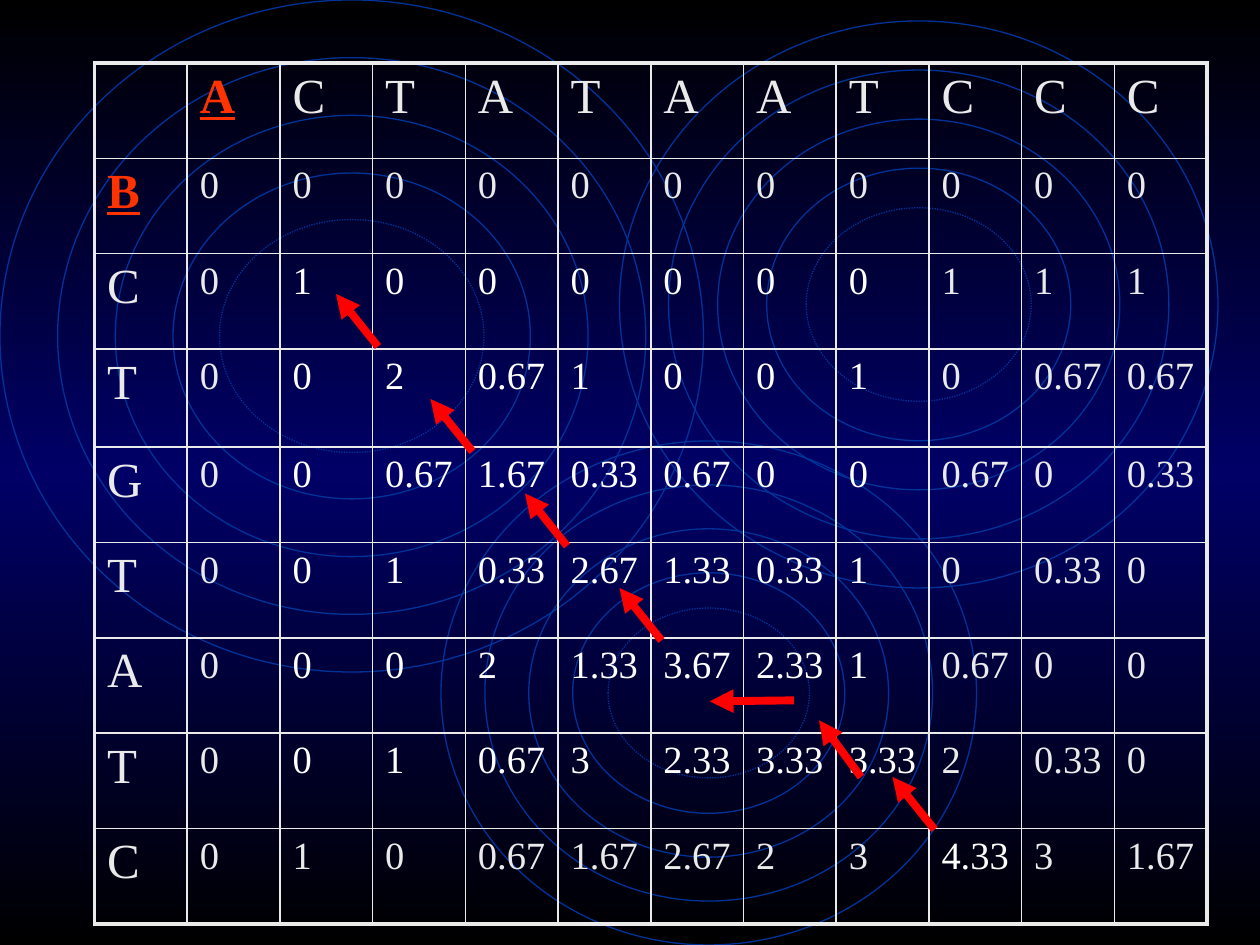
from copy import deepcopy

from lxml.etree import SubElement
from pptx import Presentation
from pptx.dml.color import RGBColor
from pptx.enum.dml import MSO_LINE
from pptx.enum.shapes import MSO_CONNECTOR, MSO_SHAPE
from pptx.oxml.ns import qn
from pptx.util import Inches, Pt

COLORS = {
    "black": "000000",
    "navy": "000066",
    "ring": "003399",
    "text": "EAEAEA",
    "window": "FFFFFF",
    "sequence": "FF3300",
    "arrow": "FF0000",
}
FONT = "Times New Roman"
GRID_COLUMNS, GRID_ROWS = 120, 90
SLIDE_WIDTH, SLIDE_HEIGHT = Inches(10), Inches(7.5)

RING_BOXES = [(0, 0, 67, 64), (42, 42, 51, 48), (59, 2, 57, 54)]
RING_INSETS = [0, 0.082, 0.164, 0.246, 0.312]

MATRIX_BOX = (9, 6, 106, 82)
MATRIX_ROWS = [
    ["", *"ACTATAATCCC"],
    "B 0 0 0 0 0 0 0 0 0 0 0".split(),
    "C 0 1 0 0 0 0 0 0 1 1 1".split(),
    "T 0 0 2 0.67 1 0 0 1 0 0.67 0.67".split(),
    "G 0 0 0.67 1.67 0.33 0.67 0 0 0.67 0 0.33".split(),
    "T 0 0 1 0.33 2.67 1.33 0.33 1 0 0.33 0".split(),
    "A 0 0 0 2 1.33 3.67 2.33 1 0.67 0 0".split(),
    "T 0 0 1 0.67 3 2.33 3.33 3.33 2 0.33 0".split(),
    "C 0 1 0 0.67 1.67 2.67 2 3 4.33 3 1.67".split(),
]
ROW_WEIGHTS = [1, 1, 1, 1.03, 1, 1, 1, 1, 1]
SEQUENCE_NAMES = {(0, 1), (1, 0)}
BEST_SCORE = (8, 9)

TRACEBACK = [
    (89, 79, 85, 74),
    (75.6, 66.7, 67.6, 66.8),
    (63, 61, 59, 56),
    (45, 43, 41, 38),
    (54, 52, 50, 47),
    (36, 33, 32, 28),
    (82, 74, 78, 68.6),
]


def color(name):
    """Return the palette colour of that name."""
    return RGBColor.from_string(COLORS[name])


def place(left, top, right, bottom):
    """Turn two pairs of grid positions into slide lengths."""
    across, down = SLIDE_WIDTH / GRID_COLUMNS, SLIDE_HEIGHT / GRID_ROWS
    return round(left * across), round(top * down), round(right * across), round(bottom * down)


def paint_background(slide):
    """Fill the slide from black through navy back to black."""
    fill = slide.background.fill
    fill.gradient()
    fill.gradient_angle = 270
    first_stop = fill._fill._gradFill.gsLst[0]
    first_stop.addnext(deepcopy(first_stop))
    for stop, name, position in zip(fill.gradient_stops, ("black", "navy", "black"), (0, 0.5, 1)):
        stop.color.rgb = color(name)
        stop.position = position


def draw_rings(slide, box):
    """Draw nested ellipses in the box, the innermost one dotted."""
    left, top, width, height = box
    group = slide.shapes.add_group_shape()
    for share in RING_INSETS:
        inset = width * share
        ellipse = group.shapes.add_shape(
            MSO_SHAPE.OVAL,
            *place(left + inset, top + inset, width - 2 * inset, height - 2 * inset),
        )
        ellipse.shadow.inherit = False
        ellipse.fill.background()
        ellipse.line.color.rgb = color("ring")
        ellipse.line.width = Pt(0.75)
        if share == RING_INSETS[-1]:
            ellipse.line.dash_style = MSO_LINE.ROUND_DOT


def set_borders(cell, outer_edges):
    """Line a cell, with heavier lines on the edges of the table."""
    properties = cell._tc.get_or_add_tcPr()
    for edge in "LRTB":
        width = Pt(2.25 if edge in outer_edges else 1)
        line = SubElement(properties, qn(f"a:ln{edge}"), w=str(width))
        SubElement(SubElement(line, qn("a:solidFill")), qn("a:srgbClr"), val=COLORS["text"])


def write_cell(cell, text, row, column):
    """Write a heading or a score with the look of its position."""
    paragraph = cell.text_frame.paragraphs[0]
    spacing = SubElement(paragraph._p.get_or_add_pPr(), qn("a:spcBef"))
    SubElement(spacing, qn("a:spcPct"), val="20000")
    run = paragraph.add_run()
    run.text = text
    is_name = (row, column) in SEQUENCE_NAMES
    in_window = 2 <= row <= 7 and 2 <= column <= 8
    run.font.name = FONT
    run.font.size = Pt(28 if row == 0 or column == 0 else 22)
    run.font.bold = run.font.underline = is_name
    if is_name:
        run.font.color.rgb = color("sequence")
    elif in_window or (row, column) == BEST_SCORE:
        run.font.color.rgb = color("window")
    else:
        run.font.color.rgb = color("text")


def draw_matrix(slide, box):
    """Build the alignment score table in the box."""
    row_count, column_count = len(MATRIX_ROWS), len(MATRIX_ROWS[0])
    left, top, width, height = place(*box)
    table = slide.shapes.add_table(row_count, column_count, left, top, width, height).table
    table.first_row = table.horz_banding = False
    for column in table.columns:
        column.width = round(width / column_count)
    for row, weight in zip(table.rows, ROW_WEIGHTS):
        row.height = round(height * weight / sum(ROW_WEIGHTS))
    for row, texts in enumerate(MATRIX_ROWS):
        for column, text in enumerate(texts):
            cell = table.cell(row, column)
            edges = {"L": column == 0, "R": column == column_count - 1,
                     "T": row == 0, "B": row == row_count - 1}
            set_borders(cell, [edge for edge, is_outer in edges.items() if is_outer])
            cell.fill.background()
            if text:
                write_cell(cell, text, row, column)


def draw_arrow(slide, ends):
    """Draw one traceback arrow between two grid positions."""
    arrow = slide.shapes.add_connector(MSO_CONNECTOR.STRAIGHT, *place(*ends))
    arrow.line.color.rgb = color("arrow")
    arrow.line.width = Pt(4.5)
    SubElement(arrow.line._get_or_add_ln(), qn("a:tailEnd"), type="triangle")
    SubElement(arrow._element.spPr, qn("a:effectLst"))


def main():
    """Build and save the presentation."""
    presentation = Presentation()
    presentation.slide_width, presentation.slide_height = SLIDE_WIDTH, SLIDE_HEIGHT
    slide = presentation.slides.add_slide(presentation.slide_layouts[6])
    paint_background(slide)
    for box in RING_BOXES:
        draw_rings(slide, box)
    draw_matrix(slide, MATRIX_BOX)
    for ends in TRACEBACK:
        draw_arrow(slide, ends)
    presentation.save("out.pptx")


if __name__ == "__main__":
    main()
